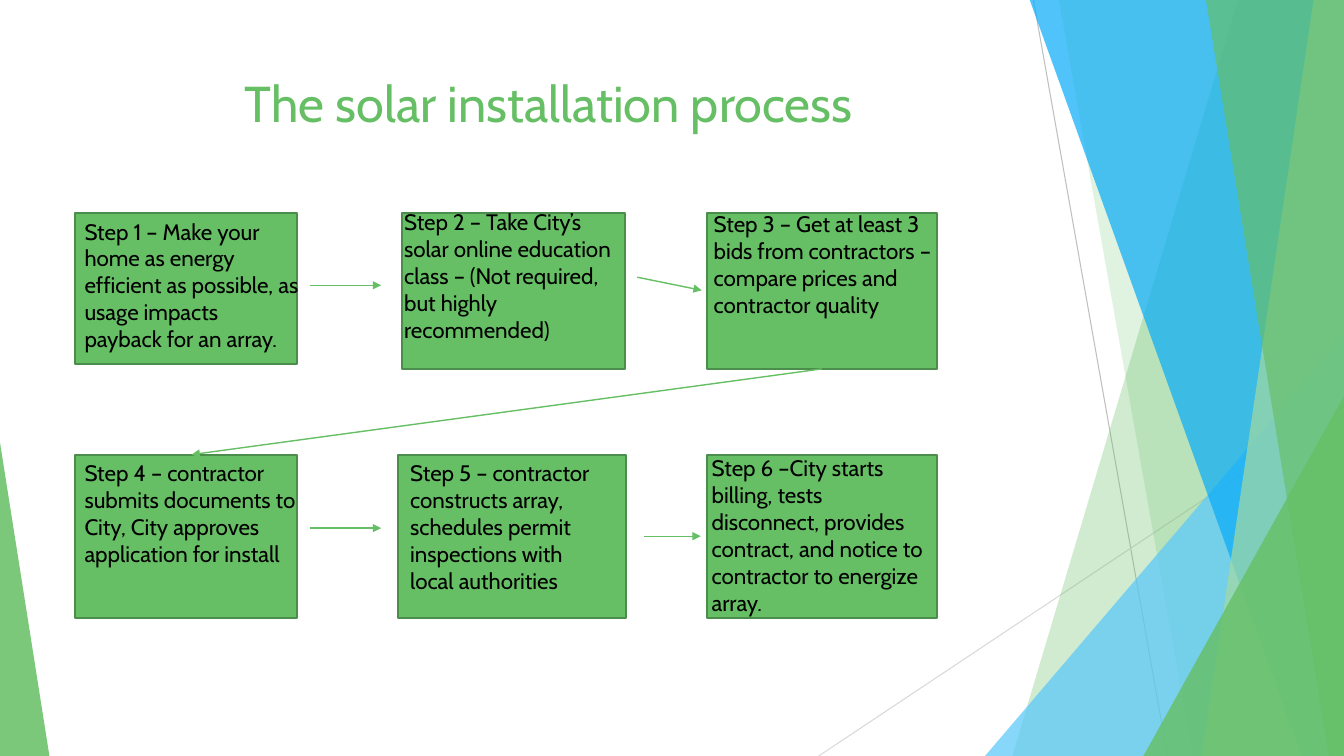
from dataclasses import dataclass

from lxml.etree import SubElement
from pptx import Presentation
from pptx.dml.color import RGBColor
from pptx.enum.shapes import MSO_CONNECTOR, MSO_SHAPE
from pptx.enum.text import MSO_ANCHOR, MSO_AUTO_SIZE as FIT, PP_ALIGN
from pptx.oxml.ns import qn
from pptx.util import Inches, Pt

PX = 9144  # EMU in one px, 100 px to the inch
RIGHT, BOTTOM = 1333, 750

GREEN = RGBColor(0x66, 0xBF, 0x64)
DARK_GREEN = RGBColor(0x4B, 0x8D, 0x4A)
LIGHT_GREEN = RGBColor(0xA3, 0xD9, 0xA2)
BLUE = RGBColor(0x07, 0xAC, 0xF8)
LIGHT_BLUE = RGBColor(0x5A, 0xC8, 0xFA)
GREY = RGBColor(0xBF, 0xBF, 0xBF)
LIGHT_GREY = RGBColor(0xD9, 0xD9, 0xD9)
BLACK = RGBColor(0, 0, 0)

Box = tuple[int, int, int, int]  # left, top, width, height


@dataclass
class Band:
    """Quadrilateral running down the right edge."""
    top_x: int
    bottom_x: int
    color: RGBColor
    alpha: int


@dataclass
class Triangle:
    box: Box
    apex: int
    color: RGBColor
    alpha: int


@dataclass
class Step:
    box: Box
    text_box: Box
    text: str


@dataclass
class Line:
    start: tuple[int, int]
    end: tuple[int, int]
    color: RGBColor = GREEN
    width: float = 1
    arrow: bool = True


DECOR = [
    Line((1025, 0), (1158, BOTTOM), GREY, 0.75, False),
    Line((RIGHT, 403), (812, BOTTOM), LIGHT_GREY, 0.75, False),
    Band(1228, 1004, GREEN, 30),
    Band(1050, 1183, GREEN, 20),
    Triangle((977, 333, 356, 417), 1, LIGHT_BLUE, 72),
    Band(1021, 1291, BLUE, 70),
    Band(1303, 1192, LIGHT_GREEN, 70),
    Band(1196, 1318, GREEN, 65),
    Triangle((1134, 393, 199, 357), 1, GREEN, 80),
    Triangle((0, 439, 49, 311), 0, GREEN, 85),
]

STEPS = [
    Step((74, 211, 221, 150), (74, 211, 233, 145),
         "Step 1 – Make your home as energy efficient as possible, "
         "as usage impacts payback for an array."),
    Step((399, 211, 221, 155), (391, 202, 241, 145),
         "Step 2 – Take City’s solar online education class – "
         "(Not required, but highly recommended)"),
    Step((701, 211, 228, 155), (698, 204, 239, 145),
         "Step 3 – Get at least 3 bids from contractors – "
         "compare prices and contractor quality"),
    Step((74, 451, 221, 162), (74, 451, 233, 145),
         "Step 4 – contractor submits documents to City, "
         "City approves application for install"),
    Step((395, 451, 226, 162), (397, 451, 217, 145),
         "Step 5 – contractor constructs array, "
         "schedules permit inspections with local authorities"),
    Step((701, 451, 228, 162), (696, 446, 239, 172),
         "Step 6 –City starts billing, tests disconnect, provides contract, "
         "and notice to contractor to energize array."),
]

ARROWS = [
    Line((307, 283), (378, 283)),
    Line((632, 275), (696, 288)),
    Line((815, 366), (190, 451)),
    Line((307, 524), (378, 524)),
    Line((639, 532), (695, 532)),
]


def emu(*lengths: int) -> list[int]:
    return [n * PX for n in lengths]


def paint(sp, color: RGBColor, alpha: int = 100) -> None:
    """Flat fill without outline or shadow."""
    sp.shadow.inherit = False
    sp.fill.solid()
    sp.fill.fore_color.rgb = color
    sp.line.fill.background()
    if alpha < 100:
        clr = sp._element.spPr.find(qn("a:solidFill"))[0]
        SubElement(clr, qn("a:alpha"), val=str(alpha * 1000))


def add_band(shapes, band: Band) -> None:
    fb = shapes.build_freeform(band.top_x, -1, scale=PX)
    fb.add_line_segments([(RIGHT, -1), (RIGHT, BOTTOM), (band.bottom_x, BOTTOM)])
    paint(fb.convert_to_shape(), band.color, band.alpha)


def add_triangle(shapes, tri: Triangle) -> None:
    sp = shapes.add_shape(MSO_SHAPE.ISOSCELES_TRIANGLE, *emu(*tri.box))
    sp.adjustments[0] = tri.apex
    paint(sp, tri.color, tri.alpha)


def add_line(shapes, line: Line) -> None:
    cx = shapes.add_connector(MSO_CONNECTOR.STRAIGHT, *emu(*line.start, *line.end))
    cx.line.color.rgb = line.color
    cx.line.width = Pt(line.width)
    if line.arrow:
        SubElement(cx.line._get_or_add_ln(), qn("a:tailEnd"), type="triangle")
    SubElement(cx._element.spPr, qn("a:effectLst"))


def add_text(shapes, box: Box, text: str, size: int, color: RGBColor,
             align: PP_ALIGN = PP_ALIGN.LEFT, fit: FIT = FIT.NONE) -> None:
    tf = shapes.add_textbox(*emu(*box)).text_frame
    frame = {"word_wrap": True, "auto_size": fit, "vertical_anchor": MSO_ANCHOR.TOP}
    for name, value in frame.items():
        setattr(tf, name, value)
    p = tf.paragraphs[0]
    p.alignment = align
    r = p.add_run()
    r.text = text
    for name, value in {"name": "Cabin", "size": Pt(size)}.items():
        setattr(r.font, name, value)
    r.font.color.rgb = color


def add_step(shapes, step: Step) -> None:
    sp = shapes.add_shape(MSO_SHAPE.RECTANGLE, *emu(*step.box))
    paint(sp, GREEN)
    sp.line.color.rgb = DARK_GREEN
    sp.line.width = Pt(1.5)
    add_text(shapes, step.text_box, step.text, 16, BLACK, fit=FIT.SHAPE_TO_FIT_TEXT)


def main() -> None:
    prs = Presentation()
    prs.slide_width, prs.slide_height = Inches(13.33), Inches(7.5)
    s = prs.slides.add_slide(prs.slide_layouts[6])

    # Background facets, back to front
    draw = {Line: add_line, Band: add_band, Triangle: add_triangle}
    for part in DECOR:
        draw[type(part)](s.shapes, part)

    # Title
    add_text(s.shapes, (74, 67, 940, 144), "The solar installation process",
             36, GREEN, PP_ALIGN.CENTER)

    # Process steps and the arrows between them
    for step in STEPS:
        add_step(s.shapes, step)
    for arrow in ARROWS:
        add_line(s.shapes, arrow)

    prs.save("out.pptx")


if __name__ == "__main__":
    main()
